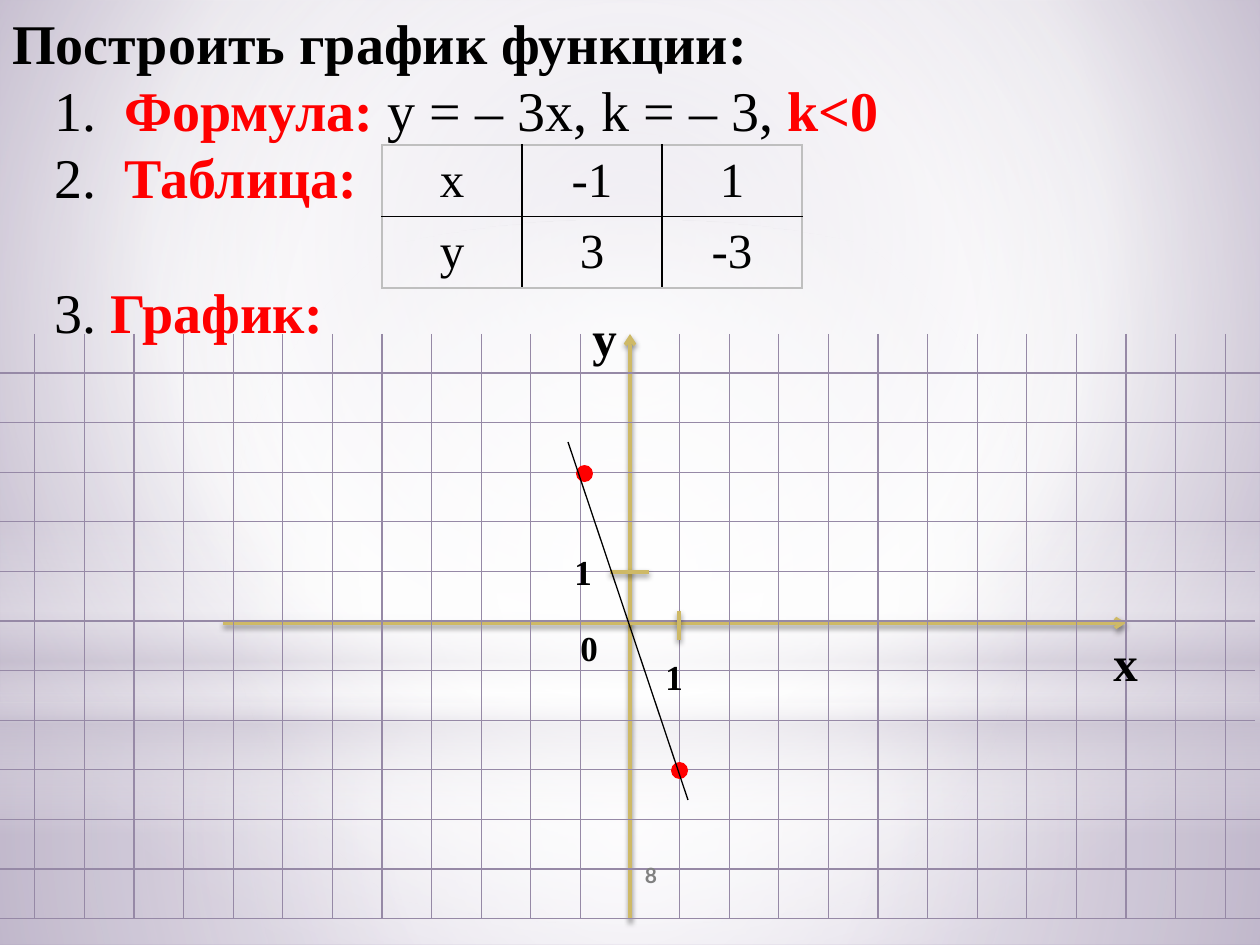
from lxml import etree
from pptx import Presentation, util as u
from pptx.dml.color import RGBColor
from pptx.enum import shapes, text
from pptx.oxml import parse_xml
from pptx.oxml.ns import qn, nsdecls

# Content
SERIF, RED, BLACK, GOLD, GRID = "Times New Roman", "FF0000", "000000", "CEB966", "9689A6"
TITLE = "Построить график функции:"
# number, hanging label start, space before in pt, runs (words, colour, bold)
STEPS = [
    ("1.", 112, 0, [("Формула: ", RED, True), ("у = – 3х, k = – 3, ", BLACK, False),
                    ("k<0", RED, True)]),
    ("2.", 112, 0, [("Таблица:", RED, True)]),
    ("3.", 98, 38.4, [("График:", RED, True)]),
]
ROWS = [("х", "-1", "1"), ("у", "3", "-3")]
LABELS = [("у", 580, 301, 50, 28), ("х", 1101, 626, 50, 28), ("0", 568, 620, 43, 20),
          ("1", 653, 649, 43, 20), ("1", 562, 544, 43, 20)]
DOTS = [(576, 465), (671, 762)]

# Gradients: stops are (position, colour, opacity); focus is left, top, right, bottom
MID = (50, 50, 50, 50)
BACK = [(0, "C1B7CD", 100), (60, "FFFFFF", 100), (100, "A191B5", 100)]
LAYERS = [
    ("RECTANGLE", (0, 703, 1260, 242),
     [(0, "FFFFFF", 91), (37, "FFFFFF", 76), (100, "C9C2D1", 79)], MID),
    ("RECTANGLE", (0, 0, 1260, 703),
     [(0, "FFFFFF", 89), (48, "FFFFFF", 62), (100, "C9C2D1", 79)], MID),
    ("RECTANGLE", (0, 519, 1260, 315),
     [(0, "FFFFFF", 0), (29, "FFFFFF", 30), (45, "C9C2D1", 40),
      (55, "FFFFFF", 26), (65, "C9C2D1", 60), (100, "FFFFFF", 0)], None),
    ("OVAL", (0, 220, 1260, 703), [(0, "FFFFFF", 100), (56, "FFFFFF", 0)], MID),
]


def px(n):
    return u.Emu(round(n * 914400 / 126))


def rgb(code):
    return RGBColor.from_string(code)


def blend(fill, root, stops, focus):
    fill.gradient()
    old = root.find(".//" + qn("a:gradFill"))
    marks = "".join(
        f'<a:gs pos="{p * 1000}"><a:srgbClr val="{c}"><a:alpha val="{o * 1000}"/>'
        "</a:srgbClr></a:gs>" for p, c, o in stops)
    way = '<a:lin ang="5400000" scaled="0"/>'
    if focus:
        rect = " ".join(f'{k}="{v * 1000}"' for k, v in zip("ltrb", focus))
        way = f'<a:path path="circle"><a:fillToRect {rect}/></a:path>'
    new = parse_xml(f'<a:gradFill {nsdecls("a")} rotWithShape="1">'
                    f"<a:gsLst>{marks}</a:gsLst>{way}</a:gradFill>")
    old.getparent().replace(old, new)


def shape(kind, box):
    item = page.shapes.add_shape(getattr(shapes.MSO_SHAPE, kind), *map(px, box))
    item.shadow.inherit = False
    item.line.fill.background()
    return item


def write(para, words, size, color=BLACK, bold=False, font=SERIF):
    run = para.add_run()
    run.text = words
    run.font.size, run.font.name, run.font.bold = u.Pt(size), font, bold
    run.font.color.rgb = rgb(color)


def area(box, wrap=True):
    frame = page.shapes.add_textbox(*map(px, box)).text_frame
    frame.word_wrap = wrap
    return frame


def line(x1, y1, x2, y2, color, width, arrow=False, shade=False):
    item = page.shapes.add_connector(shapes.MSO_CONNECTOR.STRAIGHT,
                                     *map(px, (x1, y1, x2, y2)))
    item.line.color.rgb, item.line.width = rgb(color), u.Pt(width)
    if arrow:
        etree.SubElement(item.line._get_or_add_ln(), qn("a:tailEnd"), type="arrow")
    glow = etree.SubElement(item._element.spPr, qn("a:effectLst"))
    if shade:
        cast = etree.SubElement(glow, qn("a:outerShdw"), blurRad="39370", dist="22860",
                                dir="5400000", rotWithShape="0")
        tint = etree.SubElement(cast, qn("a:srgbClr"), val=BLACK)
        etree.SubElement(tint, qn("a:alpha"), val="45000")


def edge(cell, side, color):
    ln = etree.SubElement(cell._tc.get_or_add_tcPr(), qn("a:" + side), w="12700")
    fill = etree.SubElement(ln, qn("a:solidFill"))
    etree.SubElement(fill, qn("a:srgbClr"), val=color)


deck = Presentation()
deck.slide_width, deck.slide_height = px(1260), px(945)
page = deck.slides.add_slide(deck.slide_layouts[6])

# Background and soft light
blend(page.background.fill, page._element, BACK, (20, 10, 20, 60))
for kind, box, stops, focus in LAYERS:
    item = shape(kind, box)
    blend(item.fill, item._element.spPr, stops, focus)

# Title and steps
frame = area((0, 2, 1260, 420))
para = frame.paragraphs[0]
para.line_spacing = u.Pt(38.4)
write(para, TITLE, 32, bold=True)
for num, start, gap, runs in STEPS:
    para = frame.add_paragraph()
    para.line_spacing, para.space_before = u.Pt(38.4), u.Pt(gap)
    props = para._p.get_or_add_pPr()
    props.set("marL", str(px(start)))
    props.set("indent", str(px(42 - start)))
    write(para, num + "\t", 32)
    for words, color, bold in runs:
        write(para, words, 32, color, bold)

# Table of values
grid = page.shapes.add_table(2, 3, px(382), px(145), px(420), px(142)).table
grid.first_row = grid.horz_banding = False
for r, row in enumerate(ROWS):
    grid.rows[r].height = px(71)
    for c, words in enumerate(row):
        cell = grid.cell(r, c)
        cell.vertical_anchor = text.MSO_ANCHOR.MIDDLE
        para = cell.text_frame.paragraphs[0]
        para.alignment = text.PP_ALIGN.CENTER
        write(para, words, 28)
        rims = {"lnL": c == 0, "lnR": c == 2, "lnT": r == 0, "lnB": r == 1}
        for side, outer in rims.items():
            edge(cell, side, "BFBFBF" if outer else BLACK)
        cell.fill.background()

# Axes
line(630, 919, 630, 334, GOLD, 2, True, True)
line(223, 623, 1126, 623, GOLD, 2, True, True)

# Squared paper
STEP = 49.6
for k in range(-12, 13):
    if k:
        x = 630 + k * STEP
        line(x, 334, x, 919, GRID, 0.75)
for k in range(12):
    y = 373 + k * STEP
    shift = 5 if 4 <= k <= 7 else 0
    line(1260 - shift, y, -shift, y, GRID, 0.75)

# Unit ticks and labels
line(679, 611, 679, 640, GOLD, 2, shade=True)
line(649, 572, 610, 572, GOLD, 2, shade=True)
for words, x, y, w, size in LABELS:
    para = area((x, y, w, 72 if size == 28 else 55), False).paragraphs[0]
    para.line_spacing = u.Pt(size * 1.2)
    write(para, words, size, bold=True)

# Slide number
frame = area((525, 850, 252, 50))
frame.vertical_anchor = text.MSO_ANCHOR.MIDDLE
frame.paragraphs[0].alignment = text.PP_ALIGN.CENTER
write(frame.paragraphs[0], "8", 12, "808080", True, "Lato")

# Points and graph
for x, y in DOTS:
    dot = shape("OVAL", (x, y, 17, 17))
    dot.fill.solid()
    dot.fill.fore_color.rgb = rgb(RED)
line(568, 442, 688, 800, BLACK, 0.75)

deck.save("out.pptx")
